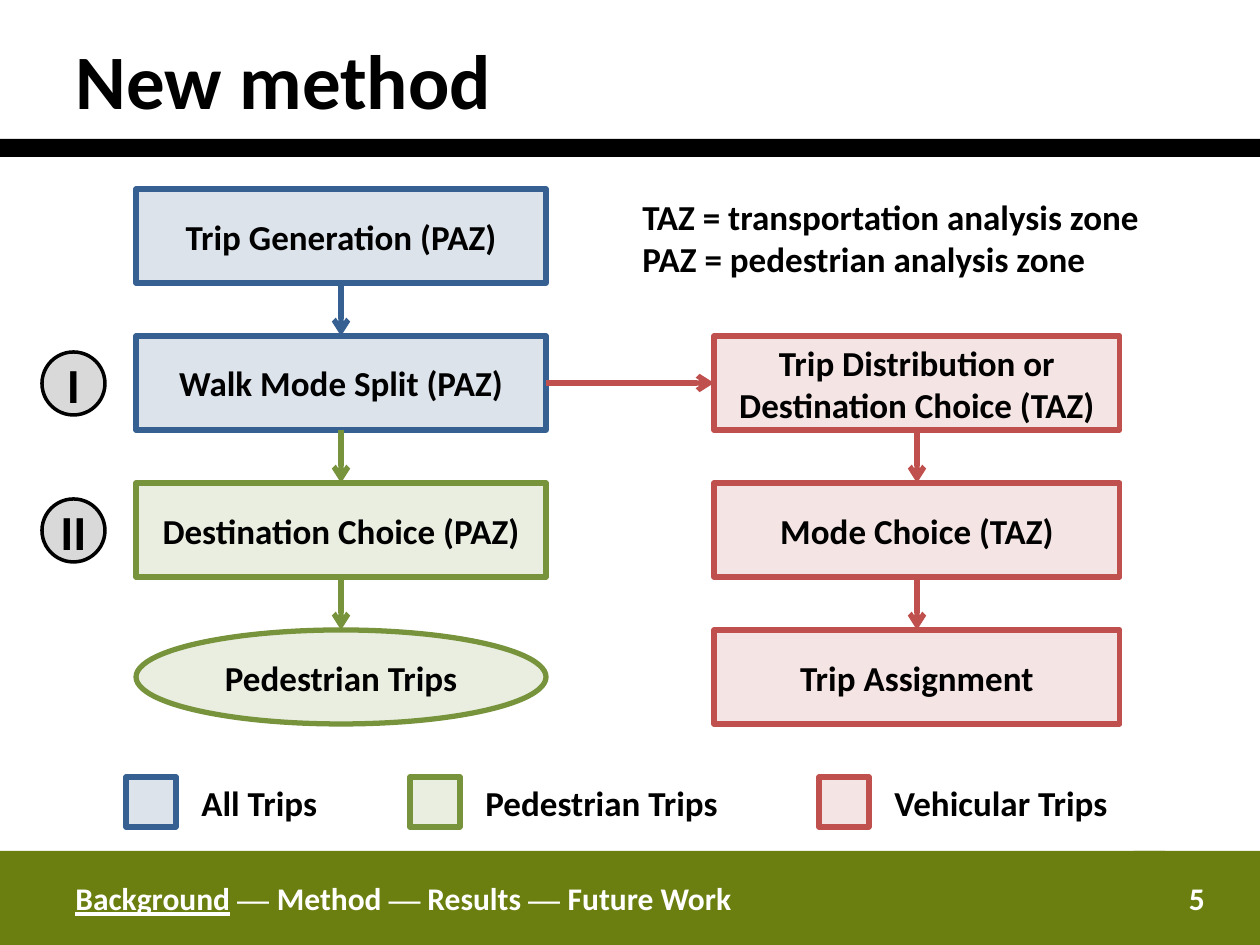
from dataclasses import dataclass
from lxml import etree
from pptx import Presentation
from pptx import util as u
from pptx.dml.color import RGBColor
from pptx.enum import shapes, text
from pptx.oxml import ns


@dataclass(frozen=True)
class Theme:
    font: str = "Calibri"
    dash_font: str = "Times New Roman"
    black: str = "000000"
    white: str = "FFFFFF"
    olive: str = "6A7F10"
    badge: str = "D9D9D9"
    all_trips: tuple = ("1F497D", "376092")
    pedestrian: tuple = ("77933C", "77933C")
    vehicular: tuple = ("C0504D", "C0504D")
    title_size: int = 44
    badge_size: int = 28
    body_size: int = 20
    footer_size: int = 18


theme = Theme()
EMU_PER_PX = 914400 / 126
RECTANGLE = shapes.MSO_SHAPE.RECTANGLE
OVAL = shapes.MSO_SHAPE.OVAL
CENTER = text.PP_ALIGN.CENTER


def add_box(kind, frame, fill, line=None, line_width=3, opacity=100):
    shape = slide.shapes.add_shape(kind, *[round(px * EMU_PER_PX) for px in frame])
    shape.shadow.inherit = False
    shape.fill.solid()
    shape.fill.fore_color.rgb = RGBColor.from_string(fill)
    if opacity < 100:
        color = shape._element.spPr.find(ns.qn("a:solidFill")).find(ns.qn("a:srgbClr"))
        etree.SubElement(color, ns.qn("a:alpha"), val=str(opacity * 1000))
    if line:
        shape.line.color.rgb = RGBColor.from_string(line)
        shape.line.width = u.Pt(line_width)
    else:
        shape.line.fill.background()
    shape.text_frame.word_wrap = True
    shape.text_frame.vertical_anchor = text.MSO_ANCHOR.MIDDLE
    return shape


def add_run(paragraph, words, size, color=theme.black, font=theme.font, align=text.PP_ALIGN.LEFT):
    paragraph.alignment = align
    run = paragraph.add_run()
    run.text = words
    run.font.name = font
    run.font.size = u.Pt(size)
    run.font.bold = True
    run.font.color.rgb = RGBColor.from_string(color)
    return run


presentation = Presentation()
presentation.slide_width = round(1260 * EMU_PER_PX)
presentation.slide_height = round(945 * EMU_PER_PX)
slide = presentation.slides.add_slide(presentation.slide_layouts[5])

add_box(RECTANGLE, (0, 139, 1260, 18), theme.black)
add_box(RECTANGLE, (0, 851, 63, 94), theme.olive)

title = slide.shapes.title
title.left, title.top, title.width, title.height = [round(px * EMU_PER_PX) for px in (63, 0, 819, 157)]
title.text_frame.auto_size = text.MSO_AUTO_SIZE.NONE
title.text_frame.vertical_anchor = text.MSO_ANCHOR.MIDDLE
add_run(title.text_frame.paragraphs[0], "New method", theme.title_size)

page = add_box(RECTANGLE, (1134, 851, 126, 94), theme.olive)
add_run(page.text_frame.paragraphs[0], "5", theme.footer_size, theme.white, align=CENTER)

ROW_TOP, ROW_STEP, ROW_HEIGHT = 189, 147, 94
LEFT_COLUMN, RIGHT_COLUMN = (136, 410), (714, 406)
steps = [
    ("generation", "Trip Generation (PAZ)", RECTANGLE, LEFT_COLUMN, 0, theme.all_trips),
    ("split", "Walk Mode Split (PAZ)", RECTANGLE, LEFT_COLUMN, 1, theme.all_trips),
    ("destination", "Destination Choice (PAZ)", RECTANGLE, LEFT_COLUMN, 2, theme.pedestrian),
    ("walking", "Pedestrian Trips", OVAL, LEFT_COLUMN, 3, theme.pedestrian),
    ("distribution", "Trip Distribution or Destination Choice (TAZ)", RECTANGLE, RIGHT_COLUMN, 1, theme.vehicular),
    ("mode", "Mode Choice (TAZ)", RECTANGLE, RIGHT_COLUMN, 2, theme.vehicular),
    ("assignment", "Trip Assignment", RECTANGLE, RIGHT_COLUMN, 3, theme.vehicular),
]
boxes = {}
for key, words, kind, (left, width), row, (fill, line) in steps:
    frame = (left, ROW_TOP + row * ROW_STEP, width, ROW_HEIGHT)
    boxes[key] = add_box(kind, frame, fill, line, opacity=15)
    add_run(boxes[key].text_frame.paragraphs[0], words, theme.body_size, align=CENTER)

BOTTOM, TOP, OVAL_BOTTOM_INDEX = 2, 0, 4
flows = [
    ("generation", 2, "split", 0, theme.all_trips),
    ("split", 2, "destination", 0, theme.pedestrian),
    ("destination", 2, "walking", 0, theme.pedestrian),
    ("split", 3, "distribution", 1, theme.vehicular),
    ("distribution", 2, "mode", 0, theme.vehicular),
    ("mode", 2, "assignment", 0, theme.vehicular),
]
for source, source_side, target, target_side, (_, line) in flows:
    arrow = slide.shapes.add_connector(shapes.MSO_CONNECTOR.STRAIGHT, 0, 0, 0, 0)
    arrow.begin_connect(boxes[source], source_side)
    arrow.end_connect(boxes[target], target_side)
    arrow.line.color.rgb = RGBColor.from_string(line)
    arrow.line.width = u.Pt(3)
    etree.SubElement(arrow.line._get_or_add_ln(), ns.qn("a:tailEnd"), type="arrow")
    etree.SubElement(arrow._element.spPr, ns.qn("a:effectLst"))

for row, numeral in enumerate(("I", "II"), start=1):
    badge = add_box(OVAL, (42, ROW_TOP + row * ROW_STEP + 16, 63, 63), theme.badge, theme.black, 2)
    frame = badge.text_frame
    frame.margin_left = frame.margin_right = frame.margin_top = frame.margin_bottom = 0
    add_run(frame.paragraphs[0], numeral, theme.badge_size, align=CENTER)

legend = [
    (126, 145, "All Trips", theme.all_trips),
    (410, 267, "Pedestrian Trips", theme.pedestrian),
    (819, 246, "Vehicular Trips", theme.vehicular),
]
labels = [((630, 189, 554, 97), ("TAZ = transportation analysis zone", "PAZ = pedestrian analysis zone"))]
for left, width, words, (fill, line) in legend:
    add_box(RECTANGLE, (left, 777, 50, 50), fill, line, opacity=15)
    labels.append(((left + 63, 775, width, 55), (words,)))

for frame, lines in labels:
    label = slide.shapes.add_textbox(*[round(px * EMU_PER_PX) for px in frame])
    label.text_frame.word_wrap = False
    label.text_frame.auto_size = text.MSO_AUTO_SIZE.SHAPE_TO_FIT_TEXT
    for index, words in enumerate(lines):
        paragraph = label.text_frame.add_paragraph() if index else label.text_frame.paragraphs[0]
        add_run(paragraph, words, theme.body_size)

footer = add_box(RECTANGLE, (63, 851, 1102, 94), theme.olive)
sections = [
    ("Background", theme.font), (" ", theme.font), ("— ", theme.dash_font),
    ("Method ", theme.font), ("—", theme.dash_font), (" Results ", theme.font),
    ("— ", theme.dash_font), ("Future Work", theme.font),
]
for words, font in sections:
    run = add_run(footer.text_frame.paragraphs[0], words, theme.footer_size, theme.white, font)
    run.font.underline = words == "Background"

presentation.save("out.pptx")
